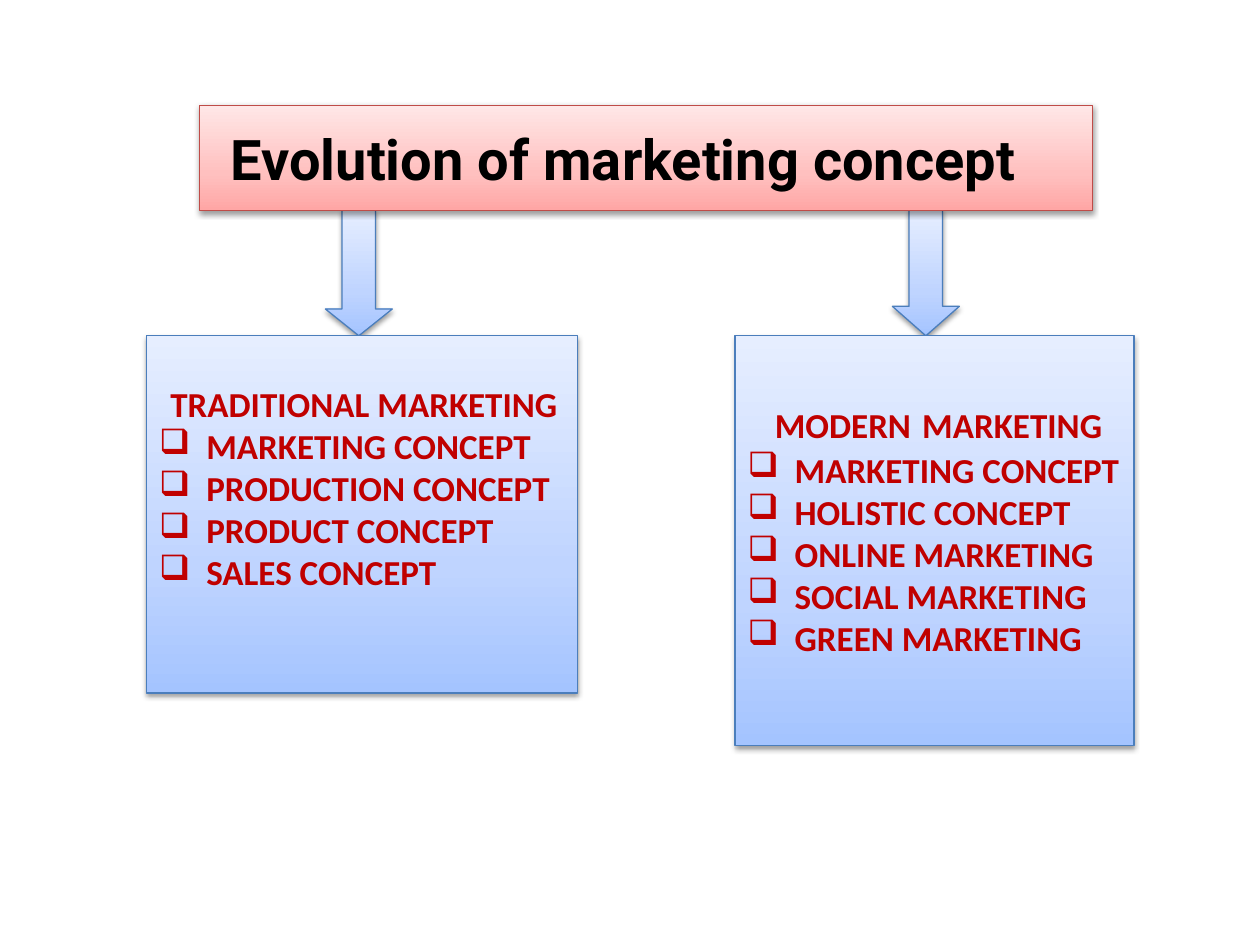
from copy import deepcopy

from lxml import etree
from pptx import Presentation
from pptx.dml.color import RGBColor
from pptx.enum import shapes, text
from pptx.oxml import ns
from pptx.util import Cm, Pt

COLORS = {
    "blue_line": "4B7EBC", "red_line": "BF4C48",
    "title": "000000", "body": "C00000", "shadow": "000000",
}
BLUE = ("A4C4FF", "BFD4FF", "E6EEFF")
RED = ("FFA6A5", "FFC0BF", "FFE7E7")
STOPS = (0, 0.35, 1)
ARROW_TOP, BOX_TOP = 4.23, 6.77


def add_run(paragraph, words, size=20, font="Calibri", color="body", bold=True):
    run = paragraph.add_run()
    run.text = words
    run.font.size, run.font.name, run.font.bold = Pt(size), font, bold
    run.font.color.rgb = RGBColor.from_string(COLORS[color])


def set_indent(paragraph, left, first=0, bullet=None):
    props = paragraph._p.get_or_add_pPr()
    props.set("marL", str(Cm(left)))
    props.set("indent", str(Cm(first)))
    if bullet:
        etree.SubElement(props, ns.qn("a:buChar")).set("char", bullet)


class ConceptSlide:
    def __init__(self, slide):
        self.slide = slide

    def style(self, shape, gradient, line):
        """Upward gradient, thin outline and soft shadow below."""
        shape.fill.gradient()
        shape.fill.gradient_angle = 90
        stop_list = shape._element.spPr.find(".//" + ns.qn("a:gsLst"))
        stop_list.append(deepcopy(stop_list[-1]))
        for stop, position, color in zip(shape.fill.gradient_stops, STOPS, gradient):
            stop.position = position
            stop.color.rgb = RGBColor.from_string(color)
        shape.line.color.rgb = RGBColor.from_string(COLORS[line])
        shape.line.width = Pt(0.75)

        effects = shape._element.spPr.find(ns.qn("a:effectLst"))
        if effects is None:
            effects = etree.SubElement(shape._element.spPr, ns.qn("a:effectLst"))
        shadow = etree.SubElement(effects, ns.qn("a:outerShdw"), blurRad=str(Pt(3.1)),
                                  dist=str(Pt(1.6)), dir="5400000", rotWithShape="0")
        color = etree.SubElement(shadow, ns.qn("a:srgbClr"), val=COLORS["shadow"])
        etree.SubElement(color, ns.qn("a:alpha"), val="38000")

    def add_shape(self, kind, left, top, width, height):
        shape = self.slide.shapes.add_shape(kind, Cm(left), Cm(top), Cm(width), Cm(height))
        shape.shadow.inherit = False
        self.style(shape, BLUE, "blue_line")
        return shape

    def add_arrow(self, left, head):
        arrow = self.add_shape(shapes.MSO_SHAPE.DOWN_ARROW, left, ARROW_TOP,
                               1.35, BOX_TOP - ARROW_TOP)
        arrow.adjustments[0], arrow.adjustments[1] = 0.5, head

    def add_title(self, words):
        title = self.slide.shapes.title
        title.left, title.top, title.width, title.height = Cm(4.02), Cm(2.12), Cm(18), Cm(2.12)
        self.style(title, RED, "red_line")
        frame = title.text_frame
        frame.auto_size = text.MSO_AUTO_SIZE.NONE
        frame.vertical_anchor = text.MSO_ANCHOR.MIDDLE
        frame.margin_right = Cm(1.16)
        frame.paragraphs[0].alignment = text.PP_ALIGN.CENTER
        add_run(frame.paragraphs[0], words, size=32, font="Roboto", color="title")
        # Keep the title in front of the arrows
        title._element.getparent().append(title._element)

    def add_box(self, left, width, height, heading, concepts, inset, shift):
        box = self.add_shape(shapes.MSO_SHAPE.RECTANGLE, left, BOX_TOP, width, height)
        frame = box.text_frame
        frame.word_wrap = True
        frame.vertical_anchor = text.MSO_ANCHOR.TOP
        frame.margin_top = Cm(inset)
        first = frame.paragraphs[0]
        first.alignment = text.PP_ALIGN.CENTER
        set_indent(first, shift)
        for words, size in heading:
            add_run(first, words, size=size)
        for concept in concepts:
            item = frame.add_paragraph()
            item.alignment = text.PP_ALIGN.LEFT
            set_indent(item, 0.95, -0.95, "❑")
            add_run(item, concept)


def main():
    deck = Presentation()
    deck.slide_width, deck.slide_height = Cm(25.4), Cm(19.05)
    page = ConceptSlide(deck.slides.add_slide(deck.slide_layouts[5]))

    # Arrows from the title to each box
    page.add_arrow(6.56, 0.4)
    page.add_arrow(17.99, 0.44)

    page.add_title("Evolution of marketing concept")

    # Traditional and modern marketing
    page.add_box(2.96, 8.68, 7.2, [("TRADITIONAL MARKETING", 20)],
                 ["MARKETING CONCEPT", "PRODUCTION CONCEPT", "PRODUCT CONCEPT",
                  "SALES CONCEPT"], inset=0.95, shift=0.08)
    page.add_box(14.82, 8.04, 8.26, [("MODERN", 20), (" ", 28), ("MARKETING", 20)],
                 ["MARKETING CONCEPT", "HOLISTIC CONCEPT", "ONLINE MARKETING",
                  "SOCIAL MARKETING", "GREEN MARKETING"], inset=1.08, shift=0.16)

    deck.save("out.pptx")


if __name__ == "__main__":
    main()
